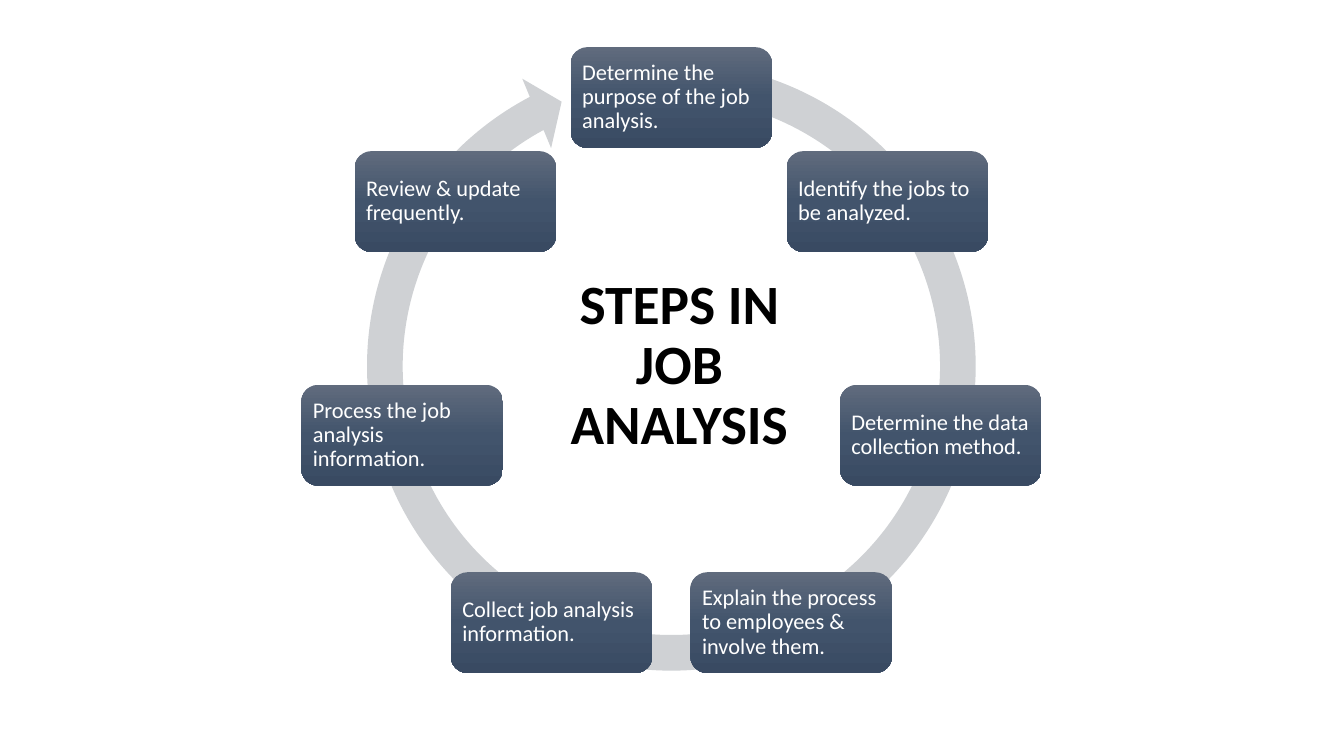
from copy import deepcopy
from math import cos, pi, sin

from pptx import Presentation
from pptx.dml.color import RGBColor
from pptx.enum.shapes import MSO_SHAPE as SHAPE
from pptx.enum.text import MSO_ANCHOR as ANCHOR, MSO_AUTO_SIZE as AUTOSIZE, PP_ALIGN as ALIGN
from pptx.oxml.ns import qn
from pptx.util import Pt

BLACK = RGBColor(0x00, 0x00, 0x00)
WHITE = RGBColor(0xFF, 0xFF, 0xFF)
RING_GREY = RGBColor(0xCF, 0xD1, 0xD4)
BOX_STOPS = [
    (0, RGBColor(0x60, 0x6B, 0x7D)),
    (0.5, RGBColor(0x42, 0x54, 0x6C)),
    (1, RGBColor(0x39, 0x4A, 0x62)),
]

STEPS = [
    "Determine the purpose of the job analysis.",
    "Identify the jobs to be analyzed.",
    "Determine the data collection method.",
    "Explain the process to employees & involve them.",
    "Collect job analysis information.",
    "Process the job analysis information.",
    "Review & update frequently.",
]
CENTER_X, CENTER_Y, RADIUS = 479.6, 267, 197.3
BOX_W, BOX_H = 144, 72
RING_SIZE = 463


def set_text(tf, text, size, color, align, bold=False):
    tf.text = text
    tf.word_wrap = True
    tf.auto_size = AUTOSIZE.NONE
    tf.vertical_anchor = ANCHOR.MIDDLE
    p = tf.paragraphs[0]
    p.alignment = align
    p.line_spacing = 0.9
    font = p.runs[0].font
    font.name, font.size, font.bold = "Calibri", Pt(size), bold
    font.color.rgb = color


def fill_gradient(sp):
    """Fill the shape from top to bottom with BOX_STOPS."""
    sp.fill.gradient()
    sp.fill.gradient_angle = 270
    stop_list = sp._element.spPr.find(qn("a:gradFill")).find(qn("a:gsLst"))
    stop_list.append(deepcopy(stop_list[-1]))
    for stop, (position, color) in zip(sp.fill.gradient_stops, BOX_STOPS):
        stop.position = position
        stop.color.rgb = color


prs = Presentation()
prs.slide_width, prs.slide_height = Pt(960), Pt(540)
s = prs.slides.add_slide(prs.slide_layouts[5])

# Title in the middle of the cycle
title = s.shapes.title
title.left, title.top, title.width, title.height = Pt(383.8), Pt(208.8), Pt(203), Pt(105.8)
set_text(title.text_frame, "STEPS IN JOB ANALYSIS", 39.6, BLACK, ALIGN.CENTER, bold=True)

# Ring with an arrowhead
ring = s.shapes.add_shape(SHAPE.CIRCULAR_ARROW, Pt(CENTER_X - RING_SIZE / 2), Pt(30.2),
                          Pt(RING_SIZE), Pt(RING_SIZE))
for i, value in enumerate([0.055, 3.307, 145.178, 169.491, 0.058]):
    ring.adjustments[i] = value
ring.fill.solid()
ring.fill.fore_color.rgb = RING_GREY
ring.line.fill.background()
ring.shadow.inherit = False

# Steps, clockwise from the top
for i, step in enumerate(STEPS):
    angle = 2 * pi * i / len(STEPS)
    left = CENTER_X + RADIUS * sin(angle) - BOX_W / 2
    top = CENTER_Y - RADIUS * cos(angle) - BOX_H / 2
    box = s.shapes.add_shape(SHAPE.ROUNDED_RECTANGLE, Pt(left), Pt(top), Pt(BOX_W), Pt(BOX_H))
    fill_gradient(box)
    box.line.fill.background()
    box.shadow.inherit = False
    tf = box.text_frame
    tf.margin_left = tf.margin_right = tf.margin_top = tf.margin_bottom = Pt(4.8)
    set_text(tf, step, 16, WHITE, ALIGN.LEFT)

prs.save("out.pptx")
